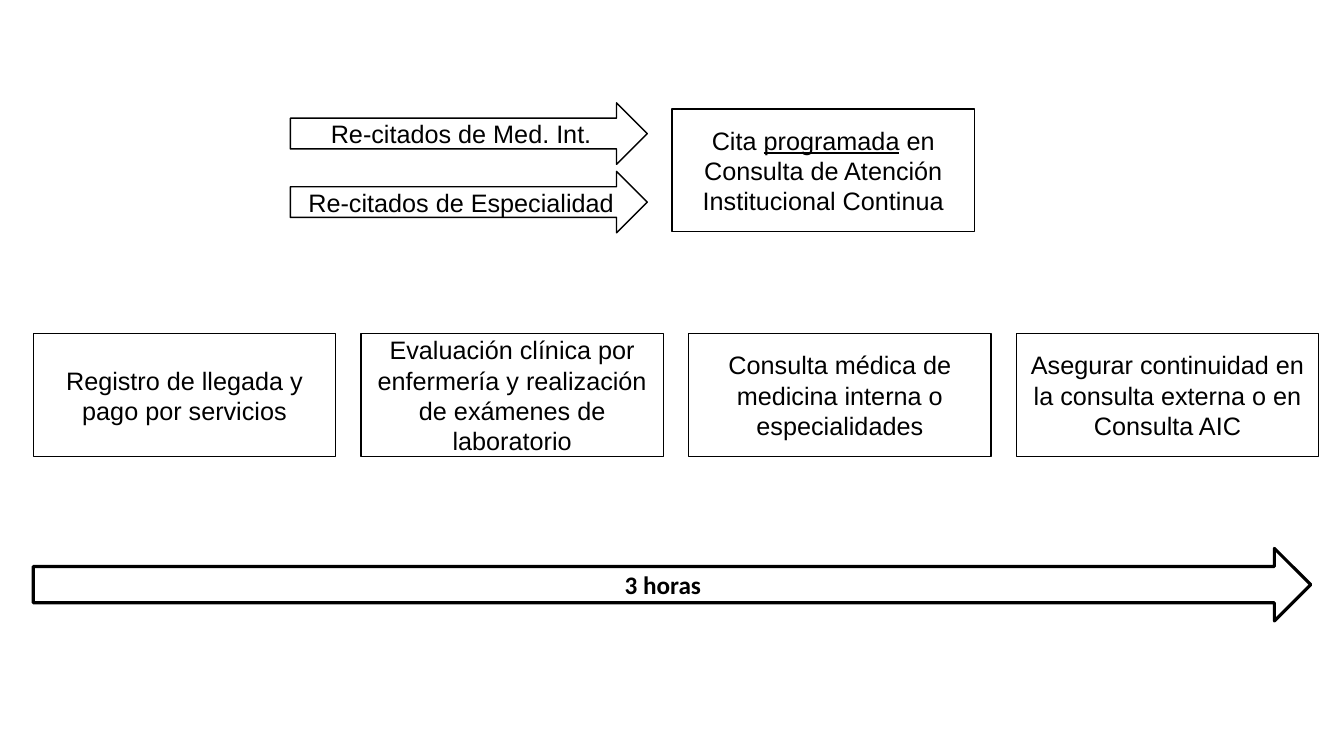
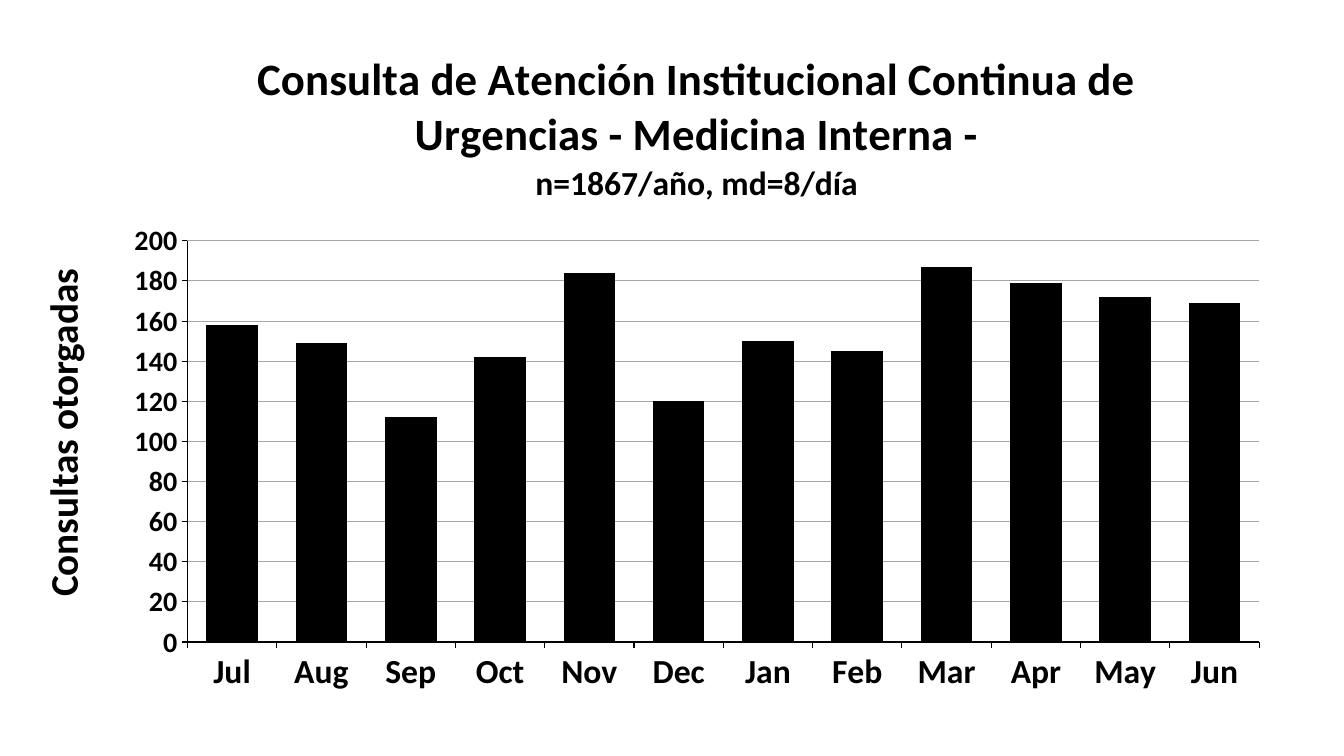
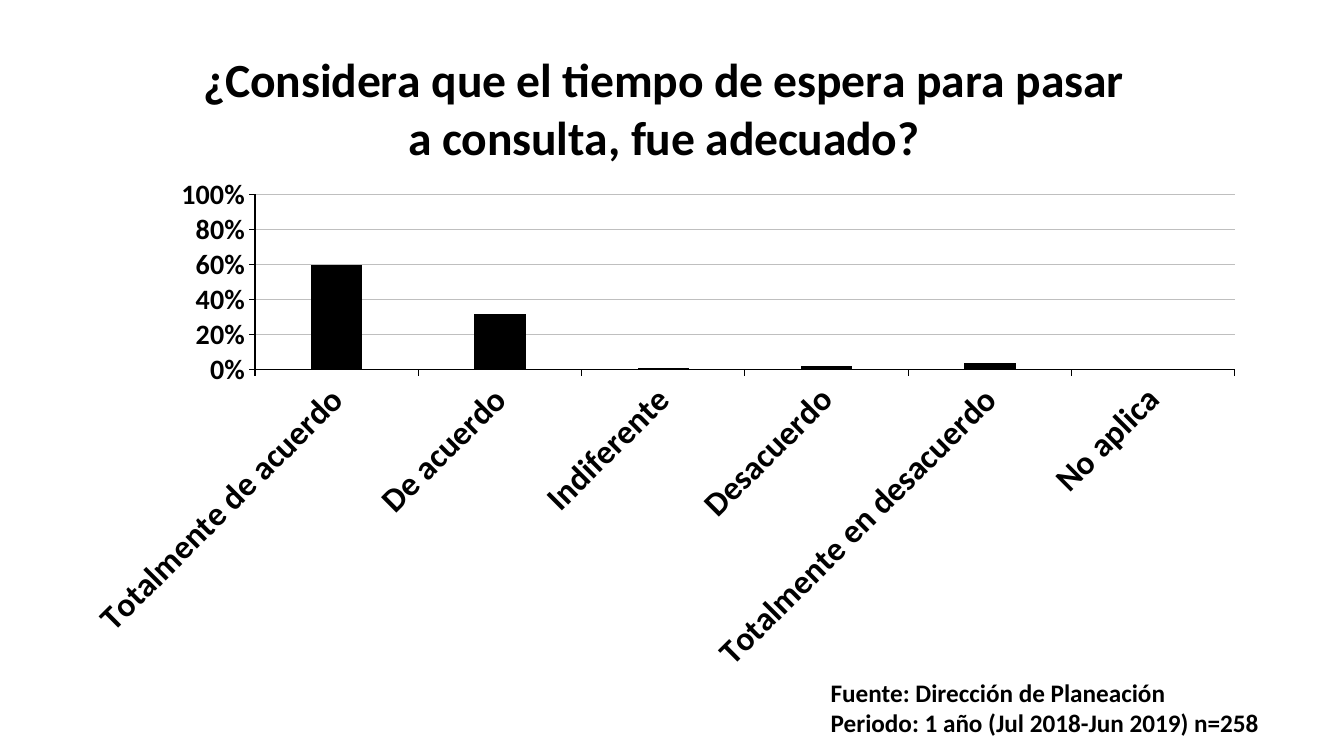
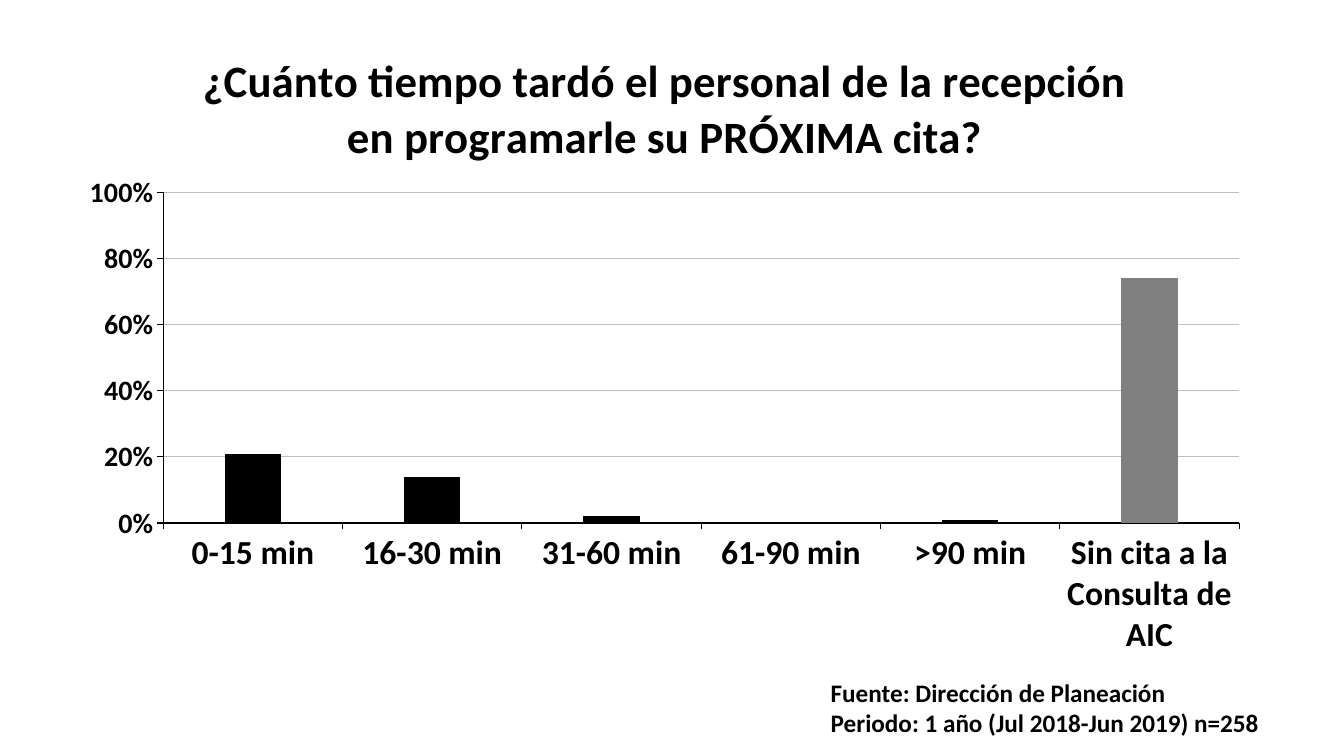
"""Build a four-slide deck on a continuing-care clinic: one flow and three column charts."""
from pptx import Presentation, util as u
from pptx.chart.data import CategoryChartData
from pptx.dml.color import RGBColor
from pptx.enum import chart as ch, shapes, text
from pptx.oxml import parse_xml
from pptx.oxml.ns import nsdecls

W, H = 13.33, 7.5
COLORS = {"ink": "000000", "accent": "808080", "grid": "A6A6A6", "soft": "BFBFBF"}
BODY = {"name": "Arial", "size": 18}
STRONG = {"name": "Calibri", "size": 18, "bold": True}
LEFT, PITCH, BOX_W, BOX_H = 0.33, 3.25, 3, 1.22
BOX, ARROW = shapes.MSO_SHAPE.RECTANGLE, shapes.MSO_SHAPE.RIGHT_ARROW

APPOINTMENT = [[("Cita ", {}), ("programada", {"underline": True}), (" en", {})],
               [("Consulta de Atención Institucional Continua", {})]]
ENTRIES = ["Re-citados de Med. Int.", "Re-citados de Especialidad"]
STEPS = ["Registro de llegada y pago por servicios",
         "Evaluación clínica por enfermería y realización de exámenes de laboratorio",
         "Consulta médica de medicina interna o especialidades",
         "Asegurar continuidad en la consulta externa o en Consulta AIC"]
DURATION = "3 horas"
AXIS_LABEL = "Consultas otorgadas"
SOURCE = ["Fuente: Dirección de Planeación", "Periodo: 1 año (Jul 2018-Jun 2019) n=258"]

PERCENT = {"fmt": "0%", "max": 1, "step": 0.2, "gap": 219, "grid": "soft"}
CHARTS = [
    {"title": [("Consulta de Atención Institucional Continua de Urgencias - Medicina Interna -", 32),
               ("n=1867/año, md=8/día", 24)],
     "data": {"Jul": 158, "Aug": 149, "Sep": 112, "Oct": 142, "Nov": 184, "Dec": 120,
              "Jan": 150, "Feb": 145, "Mar": 187, "Apr": 179, "May": 172, "Jun": 169},
     "frame": (1.1, 0.28, 11.62, 6.72), "plot": (1.86, 2.39, 10.63, 3.98),
     "fmt": "General", "max": 200, "step": 20, "gap": 73, "grid": "grid"},
    {"title": [("¿Considera que el tiempo de espera para pasar a consulta, fue adecuado?", 34)],
     "data": {"Totalmente de acuerdo": 0.6, "De acuerdo": 0.32, "Indiferente": 0.01,
              "Desacuerdo": 0.02, "Totalmente en desacuerdo": 0.04, "No aplica": 0},
     "frame": (0.68, 0.19, 11.81, 6.61), "plot": (2.53, 1.93, 9.72, 1.74),
     "turn": -45, **PERCENT},
    {"title": [("¿Cuánto tiempo tardó el personal de la recepción en programarle su PRÓXIMA cita?", 32)],
     "data": {"0-15 min": 0.21, "16-30 min": 0.14, "31-60 min": 0.02, "61-90 min": 0,
              ">90 min": 0.01, "Sin cita a la Consulta de AIC": 0.74},
     "frame": (0.65, 0.23, 11.89, 6.41), "plot": (1.62, 1.91, 10.67, 3.28),
     "accent": 5, **PERCENT},
]


def rgb(name):
    return RGBColor.from_string(COLORS[name])


def style(font, values):
    for key, value in values.items():
        setattr(font, key, u.Pt(value) if key == "size" else value)
    font.color.rgb = rgb("ink")


def write(tf, paragraphs, font, align=text.PP_ALIGN.CENTER):
    tf.word_wrap = True
    for i, runs in enumerate(paragraphs):
        p = tf.paragraphs[0] if i == 0 else tf.add_paragraph()
        p.alignment = align
        for words, extra in [(runs, {})] if isinstance(runs, str) else runs:
            r = p.add_run()
            r.text = words
            style(r.font, {**font, **extra})


def outline(s, kind, at, paragraphs, font=BODY, width=1):
    sp = s.shapes.add_shape(kind, *map(u.Inches, at))
    sp.shadow.inherit = False
    sp.fill.background()
    sp.line.color.rgb = rgb("ink")
    sp.line.width = u.Pt(width)
    sp.text_frame.vertical_anchor = text.MSO_ANCHOR.MIDDLE
    write(sp.text_frame, paragraphs, font)


def label(s, at, paragraphs, font, align, turn=0):
    sp = s.shapes.add_textbox(*map(u.Inches, at))
    sp.rotation = turn
    write(sp.text_frame, paragraphs, font, align)


def place_plot(chart, frame, plot):
    x, y, w, h = frame
    shares = {"x": (plot[0] - x) / w, "y": (plot[1] - y) / h, "w": plot[2] / w, "h": plot[3] / h}
    parts = "".join(f'<c:{k} val="{v:.4f}"/>' for k, v in shares.items())
    area = chart._chartSpace.chart.plotArea
    for old in area.xpath("c:layout"):
        area.remove(old)
    area.insert(0, parse_xml(
        f'<c:layout {nsdecls("c")}><c:manualLayout><c:layoutTarget val="inner"/>'
        f'<c:xMode val="edge"/><c:yMode val="edge"/>{parts}</c:manualLayout></c:layout>'))


def columns(s, c):
    data = CategoryChartData(number_format=c["fmt"])
    data.categories = list(c["data"])
    data.add_series("Series 1", list(c["data"].values()))
    chart = s.shapes.add_chart(ch.XL_CHART_TYPE.COLUMN_CLUSTERED,
                               *map(u.Inches, c["frame"]), data).chart
    style(chart.font, {**STRONG, "size": 16})
    chart.has_legend = False
    chart.has_title = True
    tf = chart.chart_title.text_frame
    chart.chart_title.include_in_layout = False
    for i, (words, size) in enumerate(c["title"]):
        p = tf.paragraphs[0] if i == 0 else tf.add_paragraph()
        r = p.add_run()
        r.text = words
        style(r.font, {**STRONG, "size": size})

    cat, val = chart.category_axis, chart.value_axis
    for axis, size in ((cat, 24), (val, 20)):
        axis.major_tick_mark = ch.XL_TICK_MARK.OUTSIDE
        axis.format.line.color.rgb = rgb("ink")
        axis.format.line.width = u.Pt(0.75)
        style(axis.tick_labels.font, {**STRONG, "size": size})
    cat.has_major_gridlines = False
    cat._element.xpath("c:txPr/a:bodyPr")[0].set("rot", str(c.get("turn", 0) * 60000))
    val.minimum_scale, val.maximum_scale, val.major_unit = 0, c["max"], c["step"]
    val.tick_labels.number_format = c["fmt"]
    val.tick_labels.number_format_is_linked = False
    val.major_gridlines.format.line.color.rgb = rgb(c["grid"])
    val.major_gridlines.format.line.width = u.Pt(0.75)

    plot = chart.plots[0]
    plot.vary_by_categories = False
    plot.gap_width, plot.overlap = c["gap"], -27
    series = plot.series[0]
    fills = [(series, "ink")]
    if "accent" in c:
        fills.append((series.points[c["accent"]], "accent"))
    for part, color in fills:
        part.format.fill.solid()
        part.format.fill.fore_color.rgb = rgb(color)
    place_plot(chart, c["frame"], c["plot"])


def main():
    prs = Presentation()
    prs.slide_width, prs.slide_height = u.Inches(W), u.Inches(H)
    flow, *chart_slides = [prs.slides.add_slide(prs.slide_layouts[6])
                           for _ in range(1 + len(CHARTS))]

    outline(flow, BOX, (W / 2, 1.08, BOX_W, BOX_H), APPOINTMENT)
    for i, entry in enumerate(ENTRIES):
        outline(flow, ARROW, (2.88, 1.02 + 0.68 * i, 3.54, 0.61), [entry])
    for i, step in enumerate(STEPS):
        outline(flow, BOX, (LEFT + PITCH * i, 3.31, BOX_W, BOX_H), [step])
    outline(flow, ARROW, (LEFT, 5.44, W - 2 * LEFT, 0.72), [DURATION], STRONG, 2.25)

    for s, c in zip(chart_slides, CHARTS):
        columns(s, c)
        if c["fmt"] == "0%":
            label(s, (8.14, 6.67, 4.65, 0.71), SOURCE, STRONG, text.PP_ALIGN.LEFT)
        else:
            label(s, (-1.65, 4.01, 4.54, 0.57), [AXIS_LABEL], {**STRONG, "size": 28},
                  text.PP_ALIGN.CENTER, 270)
    prs.save("out.pptx")


if __name__ == "__main__":
    main()
